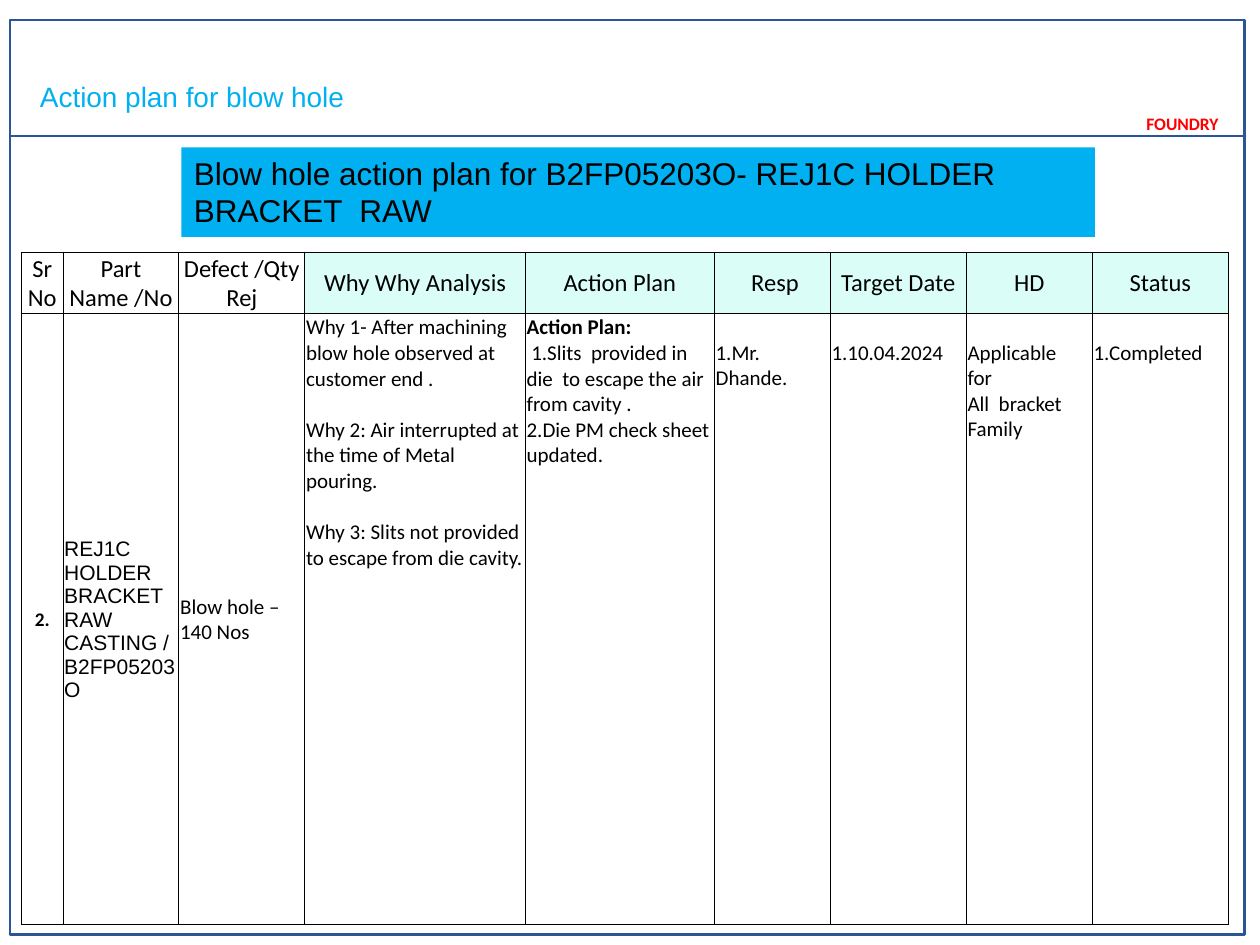
from dataclasses import dataclass

from lxml import etree
from pptx import Presentation
from pptx import util as u
from pptx.dml.color import RGBColor
from pptx.enum import shapes, text
from pptx.oxml import ns


@dataclass(frozen=True)
class Theme:
    frame: str = "2A5696"
    accent: str = "00B0F0"
    alert: str = "FF0000"
    ink: str = "000000"
    header_fill: str = "DAFEF7"
    heading_font: str = "Arial"
    body_font: str = "Calibri"
    banner_size: int = 18
    title_size: int = 16
    header_size: int = 14
    body_size: int = 12
    number_size: int = 11
    label_size: int = 10
    frame_width: float = 1.5
    border_width: float = 0.5


THEME = Theme()
LINE_GAP = 14.6
COLUMN_WIDTHS = [0.33, 0.92, 1, 1.75, 1.5, 0.92, 1.08, 1, 1.08]
ROW_HEIGHTS = [0.49, 4.85]
HEADERS = ["Sr No", "Part Name /No", "Defect /Qty Rej", "Why Why Analysis",
           "Action Plan", " Resp", "Target Date", "HD", "Status"]
FIRST_SHADED_COLUMN = 3
WHYS = ["Why 1- After machining blow hole observed at customer end .",
        "Why 2: Air interrupted at the time of Metal pouring.",
        "Why 3: Slits not provided to escape from die cavity."]
ACTIONS = ["Action Plan:",
           " 1.Slits  provided in die  to escape the air from cavity .",
           "2.Die PM check sheet updated."]
LOWERED_COLUMNS = {
    5: ["1.Mr. Dhande."],
    6: ["1.10.04.2024"],
    7: ["Applicable", "for", "All  bracket  Family"],
    8: ["1.Completed"],
}


def color(value):
    return RGBColor.from_string(value)


def write(frame, lines, size, font=THEME.body_font, ink=THEME.ink, bold=False,
          align=text.PP_ALIGN.LEFT, gap=0):
    frame.word_wrap = True
    for index, line in enumerate(lines):
        paragraph = frame.paragraphs[0] if index == 0 else frame.add_paragraph()
        paragraph.text = line
        paragraph.alignment = align
        if index and gap:
            paragraph.space_before = u.Pt(gap)
        paragraph.font.size = u.Pt(size)
        paragraph.font.name = font
        paragraph.font.bold = bold
        paragraph.font.color.rgb = color(ink)


def add_box(slide, left, top, width, height):
    box = slide.shapes.add_shape(
        shapes.MSO_SHAPE.RECTANGLE,
        u.Inches(left), u.Inches(top), u.Inches(width), u.Inches(height))
    box.shadow.inherit = False
    return box


def add_frame(slide):
    line = slide.shapes.add_connector(
        shapes.MSO_CONNECTOR.STRAIGHT,
        u.Inches(0.08), u.Inches(1.08), u.Inches(9.88), u.Inches(1.08))
    etree.SubElement(line._element.spPr, ns.qn("a:effectLst"))
    border = add_box(slide, 0.08, 0.16, 9.8, 7.26)
    border.fill.background()
    for shape in (line, border):
        shape.line.color.rgb = color(THEME.frame)
        shape.line.width = u.Pt(THEME.frame_width)


def add_label(slide, left, top, width, height, line, size, **style):
    label = slide.shapes.add_textbox(
        u.Inches(left), u.Inches(top), u.Inches(width), u.Inches(height))
    write(label.text_frame, [line], size, **style)


def add_banner(slide, line):
    banner = add_box(slide, 1.44, 1.17, 7.25, 0.71)
    banner.fill.solid()
    banner.fill.fore_color.rgb = color(THEME.accent)
    banner.line.fill.background()
    banner.text_frame.vertical_anchor = text.MSO_ANCHOR.TOP
    write(banner.text_frame, [line], THEME.banner_size, font=THEME.heading_font)


def add_borders(cell):
    properties = cell._tc.get_or_add_tcPr()
    for side in ("lnL", "lnR", "lnT", "lnB"):
        border = etree.SubElement(properties, ns.qn(f"a:{side}"),
                                  w=str(u.Pt(THEME.border_width)))
        fill = etree.SubElement(border, ns.qn("a:solidFill"))
        etree.SubElement(fill, ns.qn("a:srgbClr"), val=THEME.ink)


def fill_cell(cell, lines, size=THEME.body_size, anchor=text.MSO_ANCHOR.TOP,
              top=0.01, fill=None, **style):
    add_borders(cell)
    if fill:
        cell.fill.solid()
        cell.fill.fore_color.rgb = color(fill)
    else:
        cell.fill.background()
    cell.margin_left = cell.margin_right = u.Inches(0.01)
    cell.margin_top, cell.margin_bottom = u.Inches(top), 0
    cell.vertical_anchor = anchor
    write(cell.text_frame, lines, size, **style)


def add_plan_table(slide):
    table = slide.shapes.add_table(
        len(ROW_HEIGHTS), len(COLUMN_WIDTHS), u.Inches(0.17), u.Inches(2),
        u.Inches(sum(COLUMN_WIDTHS)), u.Inches(sum(ROW_HEIGHTS))).table
    table.first_row = table.horz_banding = False
    for column, width in zip(table.columns, COLUMN_WIDTHS):
        column.width = u.Inches(width)
    for row, height in zip(table.rows, ROW_HEIGHTS):
        row.height = u.Inches(height)

    middle, center = text.MSO_ANCHOR.MIDDLE, text.PP_ALIGN.CENTER
    for index, header in enumerate(HEADERS):
        shade = THEME.header_fill if index >= FIRST_SHADED_COLUMN else None
        fill_cell(table.cell(0, index), [header], THEME.header_size,
                  anchor=middle, align=center, fill=shade)

    fill_cell(table.cell(1, 0), ["2."], THEME.number_size,
              anchor=middle, align=center, bold=True)
    fill_cell(table.cell(1, 1), ["REJ1C HOLDER BRACKET  RAW CASTING /B2FP05203O"],
              anchor=middle, font=THEME.heading_font)
    fill_cell(table.cell(1, 2), ["Blow hole – 140 Nos"], anchor=middle)
    fill_cell(table.cell(1, 3), WHYS, gap=LINE_GAP)
    fill_cell(table.cell(1, 4), ACTIONS)
    table.cell(1, 4).text_frame.paragraphs[0].font.bold = True
    for index, lines in LOWERED_COLUMNS.items():
        fill_cell(table.cell(1, index), lines, top=0.21)


def main():
    presentation = Presentation()
    presentation.slide_width = u.Inches(10)
    presentation.slide_height = u.Inches(7.5)
    slide = presentation.slides.add_slide(presentation.slide_layouts[6])
    add_frame(slide)
    add_label(slide, 9, 0.85, 1.17, 0.25, "FOUNDRY", THEME.label_size,
              ink=THEME.alert, bold=True)
    add_label(slide, 0.17, 0.58, 8.33, 0.37, " Action plan for blow hole",
              THEME.title_size, font=THEME.heading_font, ink=THEME.accent)
    add_plan_table(slide)
    add_banner(slide, "Blow hole action plan for B2FP05203O- REJ1C HOLDER BRACKET  RAW")
    presentation.save("out.pptx")


if __name__ == "__main__":
    main()
